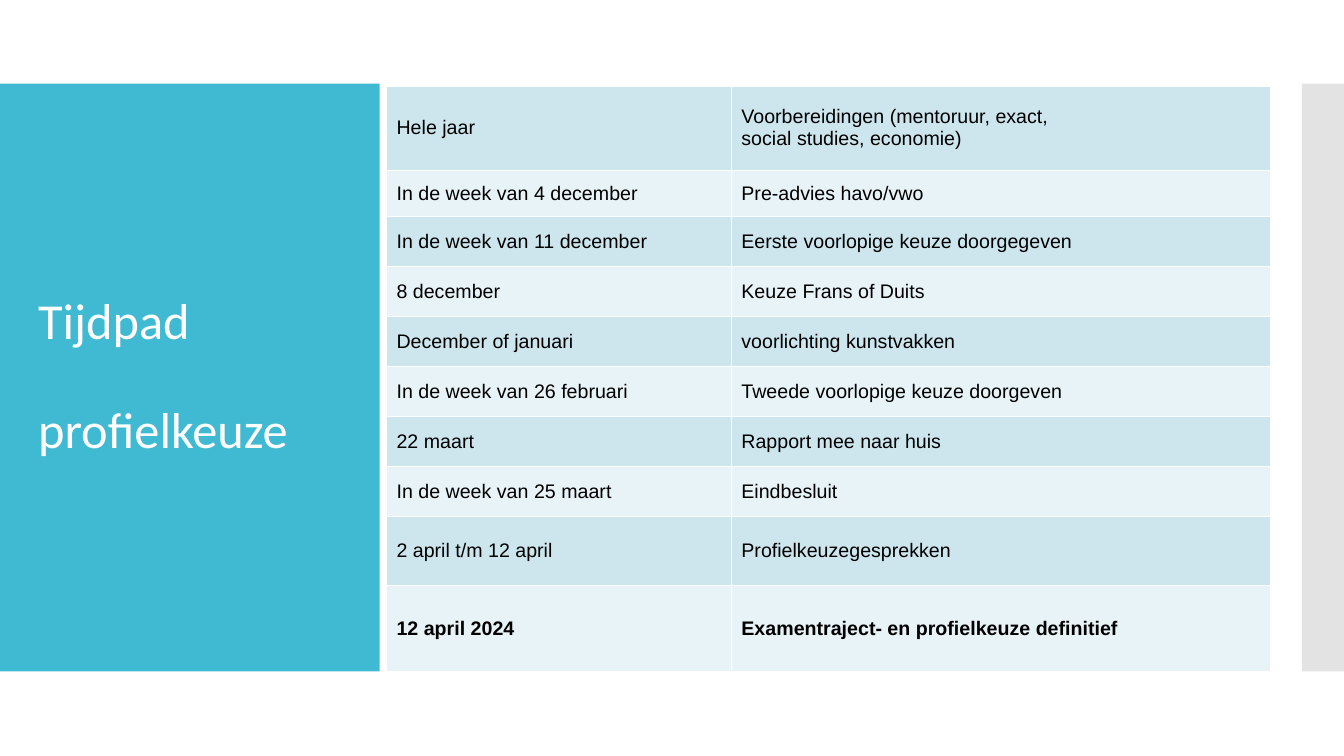
from dataclasses import dataclass

from lxml import etree
from pptx import Presentation
from pptx.dml.color import RGBColor
from pptx.enum.shapes import MSO_SHAPE
from pptx.enum.text import MSO_ANCHOR
from pptx.oxml.ns import qn
from pptx.util import Cm, Pt

RECT = MSO_SHAPE.RECTANGLE
MIDDLE = MSO_ANCHOR.MIDDLE
WHITE = "FFFFFF"
BANDS = ("E8F3F7", "CDE6EE")
HEADER_HEIGHT = 1.04
COLUMN_WIDTHS = (8.69, 13.59)


@dataclass
class Panel:
    left: float
    width: float
    color: str
    opacity: int = 100


@dataclass
class Step:
    date: str
    activity: str
    height: float = 1.26
    bold: bool = False


PANELS = [
    Panel(0, 9.57, "40BAD2"),
    Panel(32.81, 1.06, "C8C8C8", 50),
]

STEPS = [
    Step("Hele jaar", "Voorbereidingen (mentoruur, exact,\nsocial studies, economie)", 2.16),
    Step("In de week van 4 december", "Pre-advies havo/vwo", 1.16),
    Step("In de week van 11 december", "Eerste voorlopige keuze doorgegeven"),
    Step("8 december", "Keuze Frans of Duits"),
    Step("December of januari", "voorlichting kunstvakken"),
    Step("In de week van 26 februari", "Tweede voorlopige keuze doorgeven"),
    Step("22 maart", "Rapport mee naar huis"),
    Step("In de week van 25 maart", "Eindbesluit"),
    Step("2 april t/m 12 april", "Profielkeuzegesprekken", 1.73),
    Step("12 april 2024", "Examentraject- en profielkeuze definitief", 2.18, True),
]


def rgb(color: str) -> RGBColor:
    return RGBColor.from_string(color)


def format_text(tf, font: str, size: float, color: str, bold: bool = False) -> None:
    for p in tf.paragraphs:
        for r in p.runs:
            r.font.name = font
            r.font.size = Pt(size)
            r.font.bold = bold
            r.font.color.rgb = rgb(color)


def add_panel(s, panel: Panel) -> None:
    sp = s.shapes.add_shape(RECT, Cm(panel.left), Cm(2.11), Cm(panel.width), Cm(14.81))
    sp.shadow.inherit = False
    sp.fill.solid()
    sp.fill.fore_color.rgb = rgb(panel.color)
    sp.line.fill.background()
    if panel.opacity < 100:
        clr = sp.fill._xPr.find(f".//{qn('a:srgbClr')}")
        etree.SubElement(clr, qn("a:alpha"), val=str(panel.opacity * 1000))


def add_title(s, lines: str) -> None:
    sp = s.shapes.add_textbox(Cm(0.71), Cm(3.12), Cm(8.18), Cm(12.78))
    tf = sp.text_frame
    tf.word_wrap = True
    tf.vertical_anchor = MIDDLE
    tf.text = lines
    for p in tf.paragraphs:
        p.line_spacing = 0.9
    tf.paragraphs[-1].space_before = Pt(39)
    format_text(tf, "Calibri", 36, WHITE)


def set_borders(cell, top: float = 1, bottom: float = 1) -> None:
    tc_pr = cell._tc.get_or_add_tcPr()
    widths = {"a:lnL": 1, "a:lnR": 1, "a:lnT": top, "a:lnB": bottom}
    for i, (tag, width) in enumerate(widths.items()):
        ln = etree.Element(qn(tag), w=str(Pt(width)))
        fill = etree.SubElement(ln, qn("a:solidFill"))
        etree.SubElement(fill, qn("a:srgbClr"), val=WHITE)
        tc_pr.insert(i, ln)


def fill_cell(cell, color: str) -> None:
    cell.fill.solid()
    cell.fill.fore_color.rgb = rgb(color)


def add_timeline(s, steps: list[Step]) -> None:
    height = HEADER_HEIGHT + sum(step.height for step in steps)
    table = s.shapes.add_table(
        len(steps) + 1, len(COLUMN_WIDTHS), Cm(9.74), Cm(1.1), Cm(sum(COLUMN_WIDTHS)), Cm(height)
    ).table
    for column, width in zip(table.columns, COLUMN_WIDTHS):
        column.width = Cm(width)
    table.rows[0].height = Cm(HEADER_HEIGHT)
    for cell in table.rows[0].cells:
        fill_cell(cell, WHITE)
        set_borders(cell, bottom=3)
    for i, step in enumerate(steps, 1):
        row = table.rows[i]
        row.height = Cm(step.height)
        for cell, text in zip(row.cells, (step.date, step.activity)):
            cell.text_frame.text = text
            cell.vertical_anchor = MIDDLE
            format_text(cell.text_frame, "Arial", 14, "000000", step.bold)
            fill_cell(cell, BANDS[i % 2])
            set_borders(cell, top=3 if i == 1 else 1)


def main() -> None:
    prs = Presentation()
    prs.slide_width, prs.slide_height = Cm(33.87), Cm(19.05)
    s = prs.slides.add_slide(prs.slide_layouts[6])
    for panel in PANELS:
        add_panel(s, panel)
    add_timeline(s, STEPS)
    add_title(s, "Tijdpad\nprofielkeuze")
    prs.save("out.pptx")


if __name__ == "__main__":
    main()
